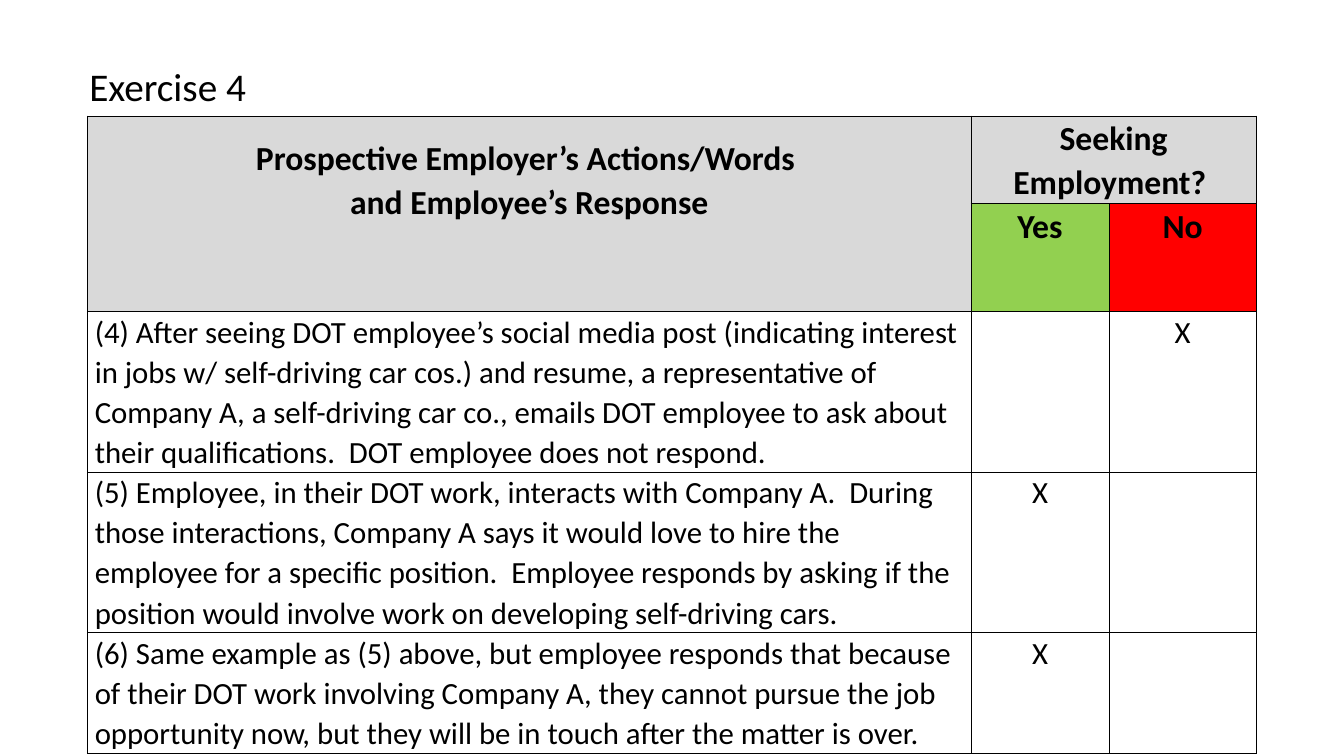
from lxml.etree import SubElement
from pptx import Presentation
from pptx.dml.color import RGBColor
from pptx.enum.text import MSO_ANCHOR, PP_ALIGN
from pptx.oxml.ns import qn
from pptx.util import Inches, Pt

THEME = {
    "font": "Calibri", "ink": "000000",
    "header": "D9D9D9", "yes": "92D050", "no": "FF0000",
    "title_size": 28, "header_size": 24, "body_size": 22,
    "thin": 0.5, "thick": 1,
}


def write(frame, lines, size, bold=False, align=PP_ALIGN.LEFT, spacing=1.07):
    frame.word_wrap = True
    for number, line in enumerate(lines):
        paragraph = frame.add_paragraph() if number else frame.paragraphs[0]
        paragraph.text = line
        paragraph.alignment = align
        paragraph.line_spacing = spacing
        paragraph.font.name = THEME["font"]
        paragraph.font.size = Pt(size)
        paragraph.font.bold = bold
        paragraph.font.color.rgb = RGBColor.from_string(THEME["ink"])


def draw_borders(cell, bottom_width):
    properties = cell._tc.get_or_add_tcPr()
    for position, side in enumerate(("lnL", "lnR", "lnT", "lnB")):
        width = bottom_width if side == "lnB" else THEME["thin"]
        border = SubElement(properties, qn(f"a:{side}"), w=str(Pt(width)))
        fill = SubElement(border, qn("a:solidFill"))
        SubElement(fill, qn("a:srgbClr"), val=THEME["ink"])
        properties.insert(position, border)  # borders precede the cell fill


deck = Presentation()
deck.slide_width, deck.slide_height = Inches(13.33), Inches(7.5)
slide = deck.slides.add_slide(deck.slide_layouts[6])

# Table grid
COLUMNS = (8.76, 1.37, 1.46)
ROWS = (0.87, 1.06, 1.59, 1.59, 1.2)
exercise = slide.shapes.add_table(
    len(ROWS), len(COLUMNS), Inches(0.87), Inches(1.15),
    Inches(sum(COLUMNS)), Inches(sum(ROWS))).table
exercise.first_row = exercise.horz_banding = False
for column, width in zip(exercise.columns, COLUMNS):
    column.width = Inches(width)
for row, height in zip(exercise.rows, ROWS):
    row.height = Inches(height)

for row_number, row in enumerate(exercise.rows):
    for cell in row.cells:
        cell.margin_left = cell.margin_right = Inches(0.07)
        cell.margin_top = cell.margin_bottom = 0
        cell.vertical_anchor = MSO_ANCHOR.TOP
        cell.fill.background()
        draw_borders(cell, THEME["thick" if row_number in (1, 4) else "thin"])

# Header cells
exercise.cell(0, 0).merge(exercise.cell(1, 0))
exercise.cell(0, 1).merge(exercise.cell(0, 2))
HEADERS = (
    (0, 0, "header", ("Prospective Employer’s Actions/Words ", "and Employee’s Response")),
    (0, 1, "header", ("Seeking Employment? ",)),
    (1, 1, "yes", ("Yes",)),
    (1, 2, "no", ("No",)),
)
for row_number, column_number, colour, lines in HEADERS:
    cell = exercise.cell(row_number, column_number)
    cell.fill.solid()
    cell.fill.fore_color.rgb = RGBColor.from_string(THEME[colour])
    write(cell.text_frame, lines, THEME["header_size"], True, PP_ALIGN.CENTER)
exercise.cell(0, 0).margin_top = Inches(0.2)

# Scenarios, each with its answer: column 1 is Yes, column 2 is No
SCENARIOS = (
    ("(4) After seeing DOT employee’s social media post (indicating interest in jobs "
     "w/ self-driving car cos.) and resume, a representative of Company A, a "
     "self-driving car co., emails DOT employee to ask about their qualifications.  "
     "DOT employee does not respond.", 2),
    ("(5) Employee, in their DOT work, interacts with Company A.  During those "
     "interactions, Company A says it would love to hire the employee for a specific "
     "position.  Employee responds by asking if the position would involve work on "
     "developing self-driving cars.", 1),
    ("(6) Same example as (5) above, but employee responds that because of their DOT "
     "work involving Company A, they cannot pursue the job opportunity now, but they "
     "will be in touch after the matter is over.", 1),
)
for row_number, (scenario, answer) in enumerate(SCENARIOS, start=2):
    write(exercise.cell(row_number, 0).text_frame, [scenario], THEME["body_size"])
    write(exercise.cell(row_number, answer).text_frame, ["X"],
          THEME["body_size"], align=PP_ALIGN.CENTER)

# Title
title = slide.shapes.add_textbox(Inches(0.7), Inches(0.57), Inches(5.96), Inches(0.57))
write(title.text_frame, [" Exercise 4"], THEME["title_size"], spacing=1.0)

deck.save("out.pptx")
